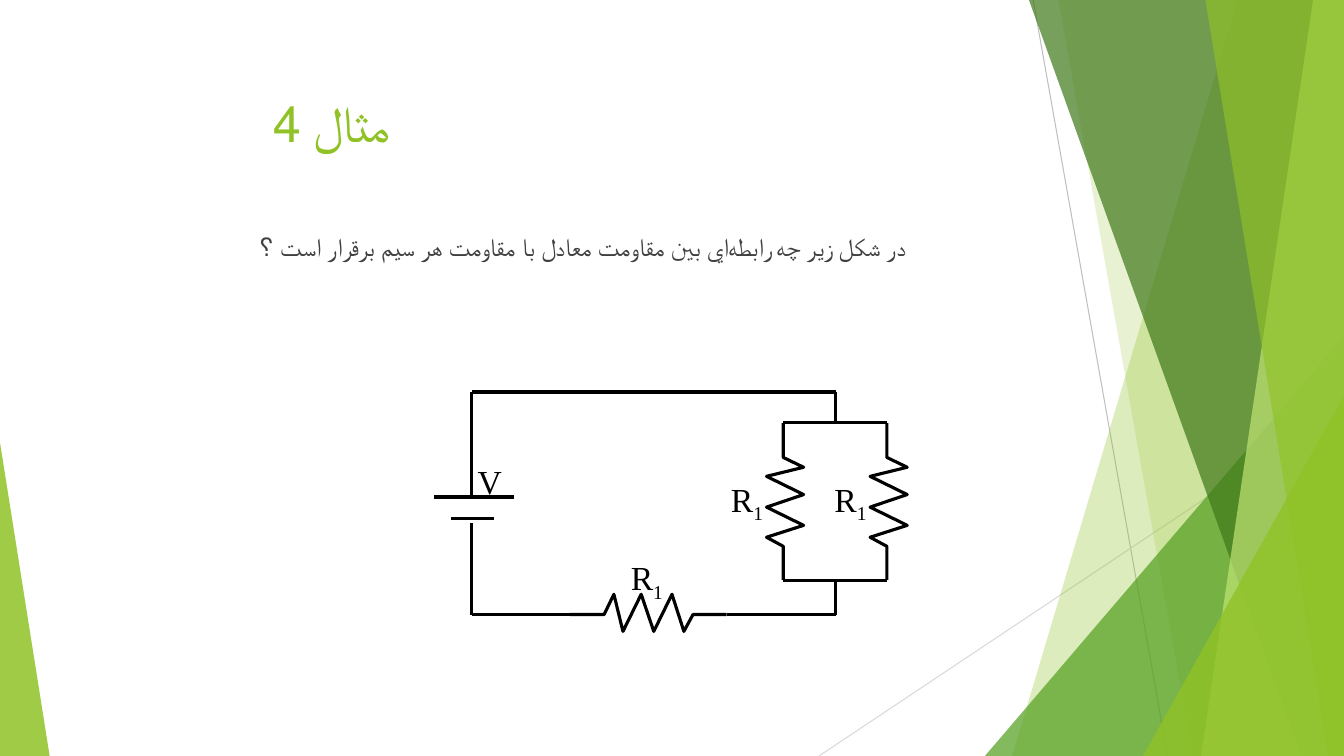
from lxml.etree import SubElement
from pptx import Presentation
from pptx.dml.color import RGBColor
from pptx.enum.shapes import MSO_CONNECTOR, MSO_SHAPE
from pptx.enum.text import MSO_ANCHOR, PP_ALIGN
from pptx.oxml.ns import qn
from pptx.util import Pt

WIDTH, HEIGHT = 960, 540
LIME = RGBColor(0x90, 0xC2, 0x26)
PALE_LIME = RGBColor(0xC0, 0xE4, 0x74)
GREEN = RGBColor(0x54, 0xA0, 0x21)
DARK_GREEN = RGBColor(0x3F, 0x78, 0x19)
GREY = RGBColor(0xBF, 0xBF, 0xBF)
LIGHT_GREY = RGBColor(0xD9, 0xD9, 0xD9)
TEXT_GREY = RGBColor(0x40, 0x40, 0x40)
BLACK = RGBColor(0, 0, 0)
HEADING_FONT, LABEL_FONT = "Lato", "Times New Roman"
WIRE_WEIGHT = 2.25
NON_JOINER = chr(0x200C)  # Persian half-space between word and suffix

# Resistor outline: distance along the wire, offset across it
ZIGZAG = [(0, 0), (24.5, 0), (31.5, -14.5), (38, 12), (51, -14.5),
          (60, 12), (73, -14.5), (81.5, 12), (88, 0), (112, 0)]


def add_line(slide, start, end, color=BLACK, weight=WIRE_WEIGHT):
    line = slide.shapes.add_connector(
        MSO_CONNECTOR.STRAIGHT, *[Pt(v) for v in (*start, *end)])
    line.line.color.rgb = color
    line.line.width = Pt(weight)
    SubElement(line.element.spPr, qn("a:effectLst"))


def add_outline(slide, points, close):
    corners = [(Pt(x), Pt(y)) for x, y in points]
    builder = slide.shapes.build_freeform(*corners[0])
    builder.add_line_segments(corners[1:], close=close)
    outline = builder.convert_to_shape()
    outline.shadow.inherit = False
    return outline


def tint(facet, color, opacity):
    facet.fill.solid()
    facet.fill.fore_color.rgb = color
    tone = facet.element.spPr.find(".//" + qn("a:srgbClr"))
    SubElement(tone, qn("a:alpha"), val=str(opacity * 1000))
    facet.line.fill.background()


def add_band(slide, top_left, bottom_left, color, opacity):
    """A facet that reaches from a slanted left edge to the slide's right edge."""
    points = [(top_left, 0), (WIDTH, 0), (WIDTH, HEIGHT), (bottom_left, HEIGHT)]
    tint(add_outline(slide, points, True), color, opacity)


def add_corner(slide, left, top, width, apex, color, opacity):
    corner = slide.shapes.add_shape(
        MSO_SHAPE.ISOSCELES_TRIANGLE, Pt(left), Pt(top), Pt(width), Pt(HEIGHT - top))
    corner.adjustments[0] = apex
    corner.shadow.inherit = False
    tint(corner, color, opacity)


def add_resistor(slide, x, y, vertical=False):
    points = [(x - across, y + along) if vertical else (x + along, y + across)
              for along, across in ZIGZAG]
    resistor = add_outline(slide, points, False)
    resistor.fill.background()
    resistor.line.color.rgb = BLACK
    resistor.line.width = Pt(WIRE_WEIGHT)


def style(run, font, size, color):
    run.font.name = font
    run.font.size = Pt(size)
    run.font.color.rgb = color


def add_label(slide, x, y, symbol, subscript=""):
    label = slide.shapes.add_textbox(Pt(x), Pt(y), Pt(39 if subscript else 32), Pt(36))
    label.text_frame.word_wrap = False
    paragraph = label.text_frame.paragraphs[0]
    for text in filter(None, (symbol, subscript)):
        run = paragraph.add_run()
        run.text = text
        style(run, LABEL_FONT, 24, BLACK)
    if subscript:
        list(label.element.iter(qn("a:rPr")))[-1].set("baseline", "-25000")


def add_backdrop(slide):
    add_line(slide, (738, 0), (834, HEIGHT), GREY, 0.75)
    add_line(slide, (WIDTH, 290), (585, HEIGHT), LIGHT_GREY, 0.75)
    add_band(slide, 884, 723, LIME, 30)
    add_band(slide, 756, 852, LIME, 20)
    add_corner(slide, 703.5, 240, 256.5, 1, GREEN, 72)
    add_band(slide, 735, 929.5, DARK_GREEN, 70)
    add_band(slide, 938, 858, PALE_LIME, 70)
    add_band(slide, 861, 949, LIME, 65)
    add_corner(slide, 816.5, 283, 143.5, 1, LIME, 80)
    add_corner(slide, 0, 316, 35.5, 0, LIME, 85)


def add_texts(slide):
    title = slide.shapes.title
    title.left, title.top, title.width, title.height = Pt(178.5), Pt(62), Pt(630), Pt(66)
    title.text_frame.text = "مثال 4"
    title.text_frame.vertical_anchor = MSO_ANCHOR.TOP
    title.text_frame.margin_left = Pt(16.5)
    heading = title.text_frame.paragraphs[0]
    heading.alignment = PP_ALIGN.LEFT
    style(heading.runs[0], HEADING_FONT, 36, LIME)

    question = slide.shapes.add_textbox(Pt(178.5), Pt(162), Pt(613), Pt(85))
    question.text_frame.word_wrap = True
    sentence = question.text_frame.paragraphs[0]
    sentence.text = NON_JOINER.join(
        ["در شكل زير چه رابطه", "اي بين مقاومت معادل با مقاومت هر سيم برقرار است ؟"])
    sentence.alignment = PP_ALIGN.JUSTIFY
    sentence.space_before = Pt(10)
    style(sentence.runs[0], HEADING_FONT, 18, TEXT_GREY)


def add_circuit(slide):
    left, right, top, bottom = 337, 597, 280, 439
    branches, branch_top, branch_bottom = (559.5, 633.5), 301.5, 414.5
    plus_plate, minus_plate = 355, 370.5
    resistor_left = 407

    # Battery and its wires
    add_line(slide, (left, top), (left, plus_plate))
    add_line(slide, (310, plus_plate), (367.5, plus_plate))
    add_line(slide, (322.5, minus_plate), (353, minus_plate))
    add_line(slide, (left, 373.5), (left, bottom))
    add_label(slide, 334, 325.5, "V")

    # Outer loop
    add_line(slide, (left, top), (right, top))
    add_line(slide, (right, top), (right, branch_top))
    add_line(slide, (right, branch_bottom), (right, bottom))
    add_line(slide, (left, bottom), (resistor_left, bottom))
    add_line(slide, (resistor_left + ZIGZAG[-1][0], bottom), (right, bottom))

    # Series resistor
    add_resistor(slide, resistor_left, bottom)
    add_label(slide, 443.5, 394.5, "R", "1")

    # Parallel resistors
    for rail in (branch_top, branch_bottom):
        add_line(slide, (branches[0], rail), (branches[1], rail))
    for branch in branches:
        add_resistor(slide, branch, branch_top + 0.75, vertical=True)
        add_label(slide, branch - 44.5, 338.5, "R", "1")


def main():
    deck = Presentation()
    deck.slide_width, deck.slide_height = Pt(WIDTH), Pt(HEIGHT)
    slide = deck.slides.add_slide(deck.slide_layouts[5])
    add_backdrop(slide)
    add_texts(slide)
    add_circuit(slide)
    deck.save("out.pptx")


if __name__ == "__main__":
    main()
